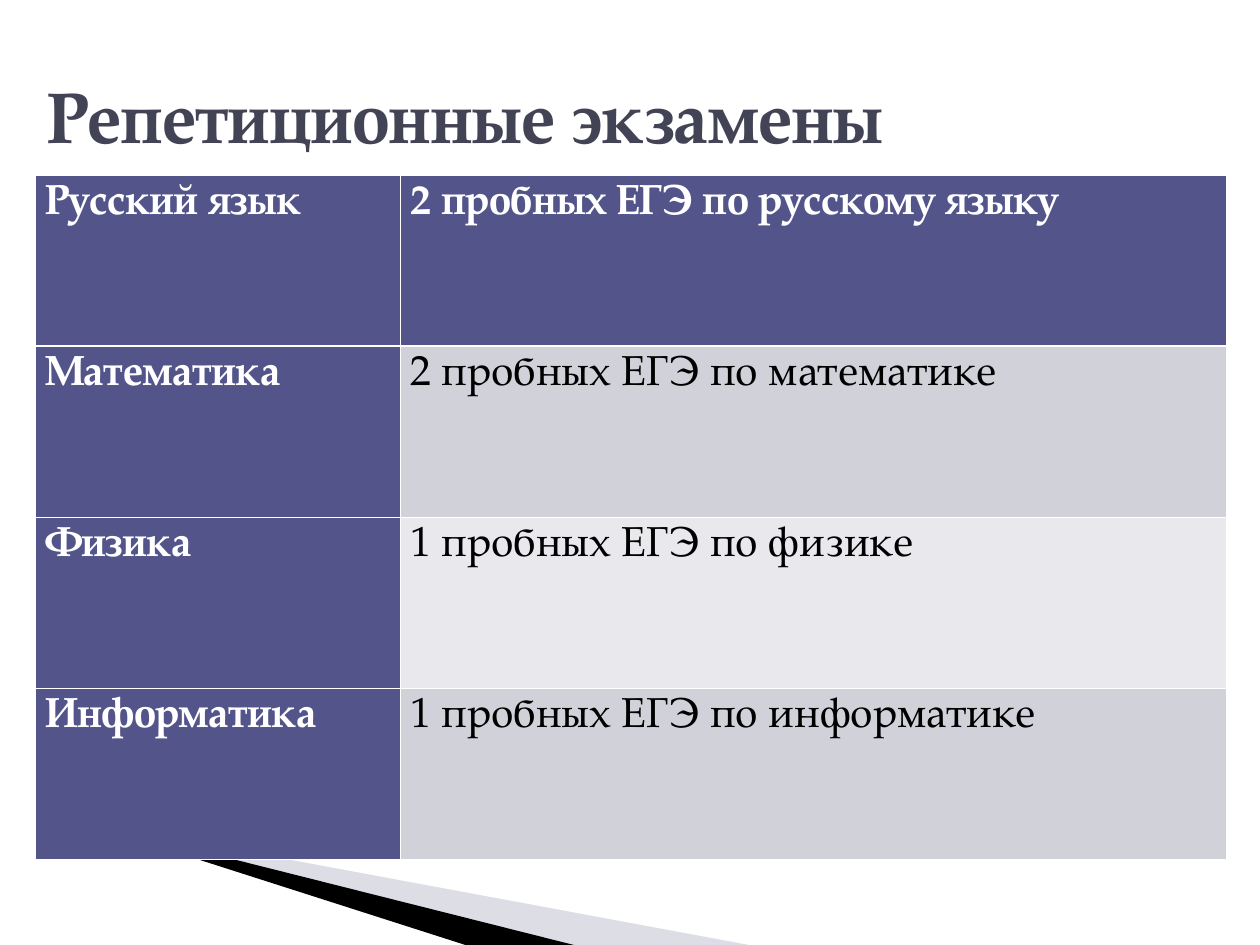
from dataclasses import dataclass

from lxml import etree
from pptx import Presentation
from pptx.dml.color import RGBColor
from pptx.enum import text as t
from pptx.oxml import ns
from pptx.util import Pt

FONT = "TeX Gyre Pagella"
WHITE = RGBColor(0xFF, 0xFF, 0xFF)
BLACK = RGBColor(0, 0, 0)
INK = RGBColor(0x42, 0x44, 0x56)
INDIGO = RGBColor(0x53, 0x54, 0x8A)
MIST = RGBColor(0xA9, 0xAA, 0xBF)
BANDS = (RGBColor(0xE9, 0xE9, 0xED), RGBColor(0xD1, 0xD1, 0xDA))
THIN, THICK = 0.45, 1.47


@dataclass
class Wedge:
    points: list[tuple[float, float]]
    color: RGBColor
    alpha: int = 100


@dataclass
class Exam:
    subject: str
    trial: str


WEDGES = [
    Wedge([(39.6, 468), (428, 540), (328, 540)], MIST, 40),
    Wedge([(38.2, 467.3), (328, 540), (266, 540)], BLACK),
]
EXAMS = [
    Exam("Русский язык", "2 пробных ЕГЭ по русскому языку"),
    Exam("Математика", "2 пробных ЕГЭ по математике"),
    Exam("Физика", "1 пробных ЕГЭ по физике"),
    Exam("Информатика", "1 пробных ЕГЭ по информатике"),
]


def style(para, size: float, color: RGBColor, bold: bool) -> None:
    font = para.font
    font.name, font.size, font.bold = FONT, Pt(size), bold
    font.color.rgb = color


def draw_wedge(slide, wedge: Wedge) -> None:
    first, *rest = wedge.points
    form = slide.shapes.build_freeform(*first, scale=Pt(1))
    form.add_line_segments(rest, close=True)
    shape = form.convert_to_shape()
    shape.shadow.inherit = False
    shape.line.fill.background()
    shape.fill.solid()
    shape.fill.fore_color.rgb = wedge.color
    if wedge.alpha < 100:
        tint = shape.fill._xPr.find(".//" + ns.qn("a:srgbClr"))
        etree.SubElement(tint, ns.qn("a:alpha"), val=str(wedge.alpha * 1000))


def add_edge(cell, side: str, width: float) -> None:
    props = cell._tc.get_or_add_tcPr()
    line = etree.SubElement(props, ns.qn(f"a:ln{side}"), w=str(Pt(width)))
    fill = etree.SubElement(line, ns.qn("a:solidFill"))
    etree.SubElement(fill, ns.qn("a:srgbClr"), val=str(WHITE))


def draw_cell(cell, words: str, row: int, head: bool) -> None:
    cell.margin_left = cell.margin_right = Pt(5.76)
    cell.margin_top = cell.margin_bottom = Pt(3.6)
    cell.text = words
    para = cell.text_frame.paragraphs[0]
    para.line_spacing = 1.07
    para.space_after = Pt(3)
    style(para, 24, WHITE if head else BLACK, head)
    # The rule under the first row is thicker than the others
    top = THICK if row == 1 else THIN
    base = THICK if row == 0 else THIN
    for side, width in (("L", THIN), ("R", THIN), ("T", top), ("B", base)):
        add_edge(cell, side, width)
    cell.fill.solid()
    cell.fill.fore_color.rgb = INDIGO if head else BANDS[row % 2]


def draw_table(slide, exams: list[Exam]) -> None:
    frame = slide.shapes.add_table(
        len(exams), 2, Pt(20.2), Pt(100), Pt(680.4), Pt(391))
    table = frame.table
    table.columns[0].width, table.columns[1].width = Pt(208.4), Pt(472)
    for row, exam in enumerate(exams):
        draw_cell(table.cell(row, 0), exam.subject, row, True)
        draw_cell(table.cell(row, 1), exam.trial, row, row == 0)


def main() -> None:
    deck = Presentation()
    deck.slide_width, deck.slide_height = Pt(720), Pt(540)
    slide = deck.slides.add_slide(deck.slide_layouts[5])

    # Corner wedges
    for wedge in WEDGES:
        draw_wedge(slide, wedge)

    # Title
    title = slide.shapes.title
    title.left, title.top = Pt(20.2), Pt(31.7)
    title.width, title.height = Pt(648), Pt(67.7)
    title.text = "Репетиционные экзамены"
    title.text_frame.vertical_anchor = t.MSO_ANCHOR.MIDDLE
    para = title.text_frame.paragraphs[0]
    para.alignment = t.PP_ALIGN.LEFT
    style(para, 41, INK, True)

    # Exam table
    draw_table(slide, EXAMS)
    deck.save("out.pptx")


if __name__ == "__main__":
    main()
